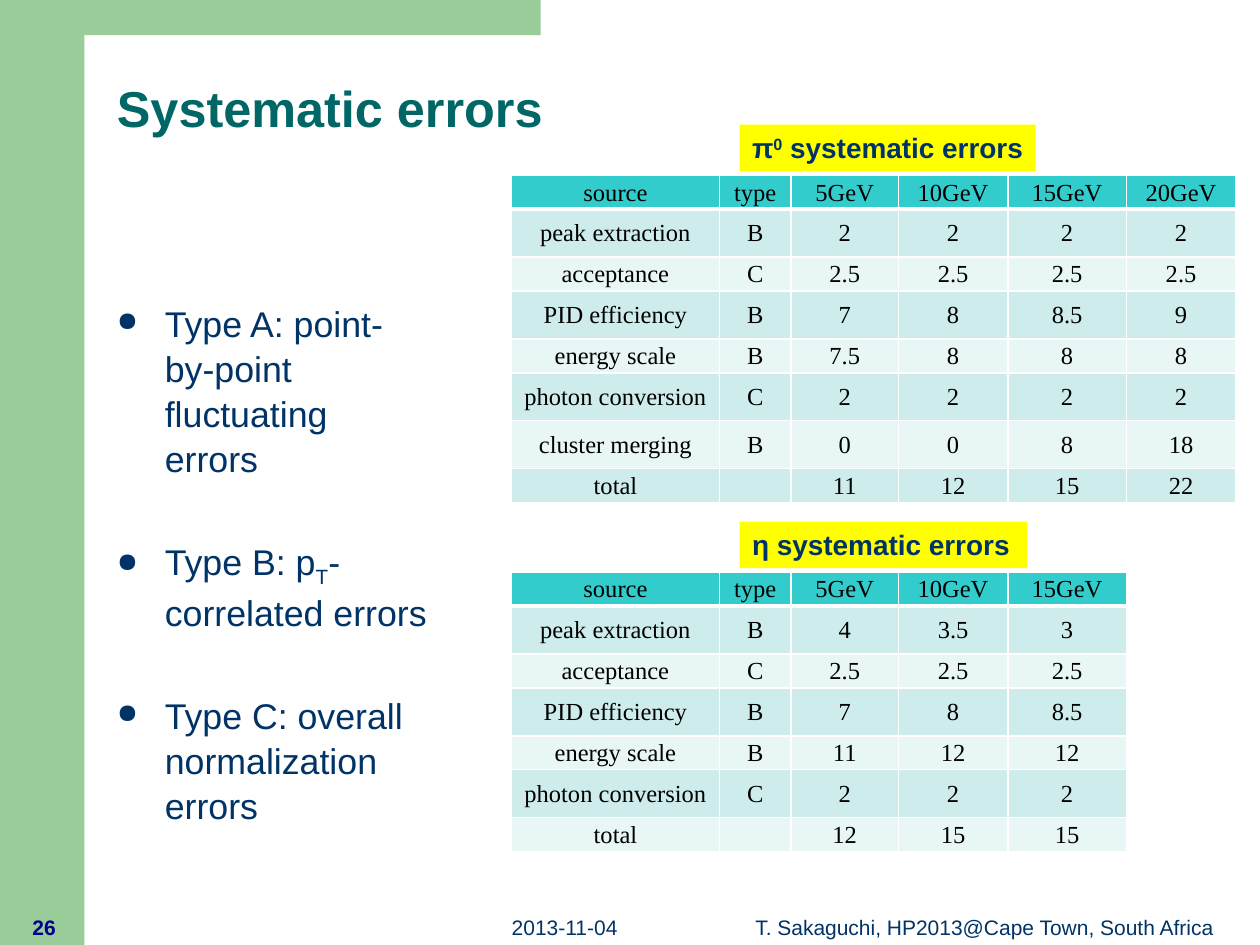
from pptx import Presentation
from pptx import util as u
from pptx.dml.color import RGBColor
from pptx.enum import shapes, text
from pptx.oxml import parse_xml
from pptx.oxml.ns import nsdecls

COLORS = {"green": "99CC99", "title": "006666", "navy": "003366", "number": "000090",
          "yellow": "FFFF00", "header": "33CCCC", "dark_band": "CEECEC",
          "light_band": "E8F6F6", "black": "000000", "white": "FFFFFF"}
LEFT, CENTER, RIGHT = text.PP_ALIGN.LEFT, text.PP_ALIGN.CENTER, text.PP_ALIGN.RIGHT
TOP, MIDDLE, BOTTOM = (text.MSO_ANCHOR.TOP, text.MSO_ANCHOR.MIDDLE,
                       text.MSO_ANCHOR.BOTTOM)
COLUMN_WIDTHS = [1.65, 0.57, 0.85, 0.87, 0.94, 0.87]
TALL_ROWS = {"peak extraction", "PID efficiency", "photon conversion", "cluster merging"}

PI0_ERRORS = [
    ["source", "type", "5GeV", "10GeV", "15GeV", "20GeV"],
    ["peak extraction", "B", "2", "2", "2", "2"],
    ["acceptance", "C", "2.5", "2.5", "2.5", "2.5"],
    ["PID efficiency", "B", "7", "8", "8.5", "9"],
    ["energy scale", "B", "7.5", "8", "8", "8"],
    ["photon conversion", "C", "2", "2", "2", "2"],
    ["cluster merging", "B", "0", "0", "8", "18"],
    ["total", "", "11", "12", "15", "22"],
]
ETA_ERRORS = [
    ["source", "type", "5GeV", "10GeV", "15GeV"],
    ["peak extraction", "B", "4", "3.5", "3"],
    ["acceptance", "C", "2.5", "2.5", "2.5"],
    ["PID efficiency", "B", "7", "8", "8.5"],
    ["energy scale", "B", "11", "12", "12"],
    ["photon conversion", "C", "2", "2", "2"],
    ["total", "", "12", "15", "15"],
]
ERROR_TYPES = [
    [("Type A: point-by-point fluctuating errors", 0)],
    [("Type B: p", 0), ("T", -25), ("-correlated errors", 0)],
    [("Type C: overall normalization errors", 0)],
]


def rgb(name):
    return RGBColor.from_string(COLORS[name])


class Deck:
    """Holds the text style and the slide being built."""

    def __init__(self, slide, font="Arial", table_font="Times New Roman"):
        self.s, self.font, self.table_font = slide, font, table_font

    def runs(self, p, parts, size, color, bold=False, font=None):
        """Add (text, baseline percent) pairs to a paragraph."""
        for words, baseline in parts:
            r = p.add_run()
            r.text = words
            r.font.name, r.font.size, r.font.bold = font or self.font, u.Pt(size), bold
            r.font.color.rgb = rgb(color)
            if baseline:
                r.font._element.set("baseline", str(baseline * 1000))

    def rect(self, box, color):
        sp = self.s.shapes.add_shape(shapes.MSO_SHAPE.RECTANGLE, *map(u.Inches, box))
        sp.shadow.inherit = False
        sp.fill.solid()
        sp.fill.fore_color.rgb = rgb(color)
        sp.line.fill.background()
        return sp

    def text(self, box, words, size, color, align=LEFT, bold=False):
        tf = self.s.shapes.add_textbox(*map(u.Inches, box)).text_frame
        tf.word_wrap, tf.vertical_anchor = True, BOTTOM
        p = tf.paragraphs[0]
        p.alignment = align
        self.runs(p, [(words, 0)], size, color, bold)
        return p

    def label(self, box, parts):
        tf = self.rect(box, "yellow").text_frame
        tf.word_wrap, tf.vertical_anchor = False, TOP
        p = tf.paragraphs[0]
        p.alignment = LEFT
        self.runs(p, parts, 16, "navy", bold=True)

    def bullets(self, box, items, size, gap):
        tf = self.s.shapes.add_textbox(*map(u.Inches, box)).text_frame
        tf.word_wrap, tf.vertical_anchor = True, TOP
        for i, parts in enumerate(items):
            p = tf.add_paragraph() if i else tf.paragraphs[0]
            p.line_spacing = 1.05
            if i:
                p.space_before = u.Pt(gap)
            pPr = p._p.get_or_add_pPr()
            pPr.set("marL", str(u.Inches(0.38)))
            pPr.set("indent", str(-u.Inches(0.38)))
            for xml in (f'<a:buClr {nsdecls("a")}><a:srgbClr val="{COLORS["navy"]}"/></a:buClr>',
                        f'<a:buSzPct {nsdecls("a")} val="75000"/>',
                        f'<a:buChar {nsdecls("a")} char="●"/>'):
                pPr.append(parse_xml(xml))
            self.runs(p, parts, size, "navy")

    def cell(self, cell, words, fill, top, bottom):
        """Fill one cell; top and bottom are its border widths in points."""
        cell.margin_left = cell.margin_right = cell.margin_top = u.Inches(0.01)
        cell.margin_bottom = 0
        cell.vertical_anchor = MIDDLE
        for side, width in zip("LRTB", (1, 1, top, bottom)):
            cell._tc.get_or_add_tcPr().append(parse_xml(
                f'<a:ln{side} {nsdecls("a")} w="{u.Pt(width)}"><a:solidFill>'
                f'<a:srgbClr val="{COLORS["white"]}"/></a:solidFill></a:ln{side}>'))
        cell.fill.solid()
        cell.fill.fore_color.rgb = rgb(fill)
        p = cell.text_frame.paragraphs[0]
        p.alignment = CENTER
        if words:
            self.runs(p, [(words, 0)], 14, "black", font=self.table_font)
        else:
            p._p.append(parse_xml(f'<a:endParaRPr {nsdecls("a")} sz="1400"/>'))

    def table(self, left, top, rows):
        widths = COLUMN_WIDTHS[:len(rows[0])]
        heights = [0.38 if row[0] in TALL_ROWS else 0.27 for row in rows]
        box = left, top, sum(widths), sum(heights)
        table = self.s.shapes.add_table(len(rows), len(widths), *map(u.Inches, box)).table
        table.first_row = table.horz_banding = False
        for column, width in zip(table.columns, widths):
            column.width = u.Inches(width)
        for i, row in enumerate(rows):
            table.rows[i].height = u.Inches(heights[i])
            fill = "header" if i == 0 else "dark_band" if i % 2 else "light_band"
            for j, words in enumerate(row):
                self.cell(table.cell(i, j), words, fill,
                          top=3 if i == 1 else 1, bottom=3 if i == 0 else 1)


def main():
    prs = Presentation()
    prs.slide_width, prs.slide_height = u.Inches(10), u.Inches(7.5)
    deck = Deck(prs.slides.add_slide(prs.slide_layouts[6]))

    deck.rect((0, 0, 0.67, 7.5), "green")
    deck.rect((0.04, 0, 4.25, 0.28), "green")
    title = deck.text((0.83, 0.6, 8.67, 0.55), "Systematic errors", 28.8, "title", bold=True)
    title.line_spacing = 0.9
    deck.bullets((0.83, 2.33, 2.68, 3.15), ERROR_TYPES, 20.4, gap=33)

    deck.text((2.67, 7.14, 2.33, 0.37), "2013-11-04", 12, "navy", RIGHT)
    deck.text((5.63, 7.14, 4.37, 0.37), "T. Sakaguchi, HP2013@Cape Town, South Africa",
              12, "navy", CENTER)
    deck.text((0.03, 6.98, 0.64, 0.53), "26", 12, "number", CENTER, bold=True)

    deck.table(4.06, 1.39, PI0_ERRORS)
    deck.table(4.06, 4.54, ETA_ERRORS)
    deck.label((5.87, 0.99, 2.35, 0.37), [("π", 0), ("0", 30), (" systematic errors", 0)])
    deck.label((5.87, 4.14, 2.28, 0.37), [("η systematic errors", 0)])
    prs.save("out.pptx")


if __name__ == "__main__":
    main()
